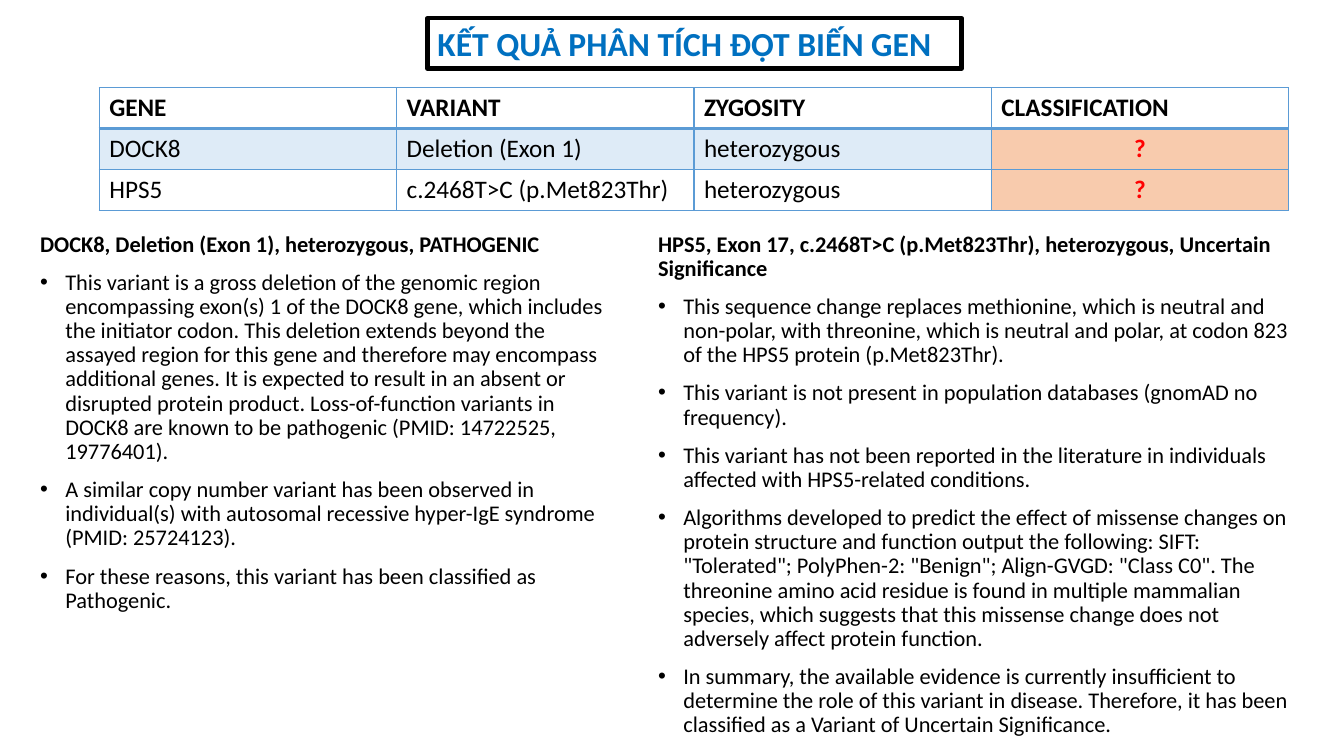
from lxml import etree
from pptx import Presentation
from pptx.dml.color import RGBColor
from pptx.enum.text import MSO_ANCHOR, MSO_AUTO_SIZE, PP_ALIGN
from pptx.oxml.ns import qn
from pptx.util import Pt

LEFT, CENTER = PP_ALIGN.LEFT, PP_ALIGN.CENTER
TOP, MIDDLE = MSO_ANCHOR.TOP, MSO_ANCHOR.MIDDLE
NO_AUTOFIT = MSO_AUTO_SIZE.NONE
TITLE_ONLY = 5

FONT = "Calibri"
BLACK, BLUE, RED = "000000", "0070C0", "FF0000"
BORDER, BAND, PEACH = "5B9BD5", "DEEBF7", "F8CBAD"

TITLE = "KẾT QUẢ PHÂN TÍCH ĐỘT BIẾN GEN"
TITLE_BOX = (305.3, 13, 381.6, 36)

VARIANTS = [
    ("GENE", "VARIANT", "ZYGOSITY", "CLASSIFICATION"),
    ("DOCK8", "Deletion (Exon 1)", "heterozygous", "?"),
    ("HPS5", "c.2468T>C (p.Met823Thr)", "heterozygous", "?"),
]
TABLE_LEFT, TABLE_TOP = 70.9, 62.6
COLUMN_WIDTH, ROW_HEIGHT = 212.4, 29.2
ROW_FILLS = (None, BAND, None)

NOTES_TOP, NOTES_HEIGHT, INDENT = 162.7, 342.7, 18
NOTES = [
    (21.6, 418.3, "DOCK8, Deletion (Exon 1), heterozygous, PATHOGENIC", [
        "This variant is a gross deletion of the genomic region encompassing exon(s) 1 of the DOCK8 gene, "
        "which includes the initiator codon. This deletion extends beyond the assayed region for this gene "
        "and therefore may encompass additional genes. It is expected to result in an absent or disrupted "
        "protein product. Loss-of-function variants in DOCK8 are known to be pathogenic "
        "(PMID: 14722525, 19776401).",
        "A similar copy number variant has been observed in individual(s) with autosomal recessive "
        "hyper-IgE syndrome (PMID: 25724123).",
        "For these reasons, this variant has been classified as Pathogenic.",
    ]),
    (463, 468.7, "HPS5, Exon 17, c.2468T>C (p.Met823Thr), heterozygous, Uncertain Significance", [
        "This sequence change replaces methionine, which is neutral and non-polar, with threonine, "
        "which is neutral and polar, at codon 823 of the HPS5 protein (p.Met823Thr).",
        "This variant is not present in population databases (gnomAD no frequency).",
        "This variant has not been reported in the literature in individuals affected with "
        "HPS5-related conditions.",
        "Algorithms developed to predict the effect of missense changes on protein structure and function "
        'output the following: SIFT: "Tolerated"; PolyPhen-2: "Benign"; Align-GVGD: "Class C0". '
        "The threonine amino acid residue is found in multiple mammalian species, which suggests that this "
        "missense change does not adversely affect protein function.",
        "In summary, the available evidence is currently insufficient to determine the role of this variant "
        "in disease. Therefore, it has been classified as a Variant of Uncertain Significance.",
    ]),
]


def color(value):
    return RGBColor.from_string(value)


def apply(target, values):
    for name, value in values.items():
        setattr(target, name, value)


def write(para, text, size, shade=BLACK, bold=False, **layout):
    span = para.add_run()
    span.text = text
    apply(span.font, {"name": FONT, "size": Pt(size), "bold": bold})
    span.font.color.rgb = color(shade)
    apply(para, {"alignment": LEFT, **layout})


def add_bullet(para):
    properties = para._p.get_or_add_pPr()
    properties.set("marL", str(Pt(INDENT)))
    properties.set("indent", str(-Pt(INDENT)))
    etree.SubElement(properties, qn("a:buFont")).set("typeface", "Arial")
    etree.SubElement(properties, qn("a:buChar")).set("char", "•")


def add_borders(cell, widths):
    properties = cell._tc.get_or_add_tcPr()
    for index, (side, width) in enumerate(widths.items()):
        line = etree.Element(qn(f"a:ln{side}"), w=str(Pt(width)))
        fill = etree.SubElement(line, qn("a:solidFill"))
        etree.SubElement(fill, qn("a:srgbClr")).set("val", BORDER)
        properties.insert(index, line)


def add_title(page):
    box = page.shapes.title
    apply(box, dict(zip(("left", "top", "width", "height"), map(Pt, TITLE_BOX))))
    box.line.color.rgb = color(BLACK)
    box.line.width = Pt(3)
    frame = box.text_frame
    apply(frame, {"word_wrap": True, "auto_size": NO_AUTOFIT, "vertical_anchor": MIDDLE})
    write(frame.paragraphs[0], TITLE, 24, BLUE, True)


def add_variants(page):
    rows, columns = len(VARIANTS), len(VARIANTS[0])
    frame = page.shapes.add_table(rows, columns, Pt(TABLE_LEFT), Pt(TABLE_TOP),
                                  Pt(COLUMN_WIDTH * columns), Pt(ROW_HEIGHT * rows))
    table = frame.table
    apply(table, {"first_row": False, "horz_banding": False})
    for row, values in enumerate(VARIANTS):
        for column, text in enumerate(values):
            cell = table.cell(row, column)
            unknown = text == "?"
            fill = PEACH if unknown else ROW_FILLS[row]
            if fill:
                cell.fill.solid()
                cell.fill.fore_color.rgb = color(fill)
            else:
                cell.fill.background()
            write(cell.text_frame.paragraphs[0], text, 18, RED if unknown else BLACK,
                  unknown or row == 0, alignment=CENTER if unknown else LEFT)
            add_borders(cell, {"L": 1, "R": 1, "T": 2 if row == 1 else 1, "B": 2 if row == 0 else 1})


def add_notes(page, left, width, heading, points):
    box = page.shapes.add_textbox(Pt(left), Pt(NOTES_TOP), Pt(width), Pt(NOTES_HEIGHT))
    frame = box.text_frame
    apply(frame, {"word_wrap": True, "auto_size": NO_AUTOFIT, "vertical_anchor": TOP})
    spacing = {"line_spacing": 0.9, "space_before": Pt(10)}
    write(frame.paragraphs[0], heading, 16, bold=True, **spacing)
    for point in points:
        para = frame.add_paragraph()
        write(para, point, 16, **spacing)
        add_bullet(para)


def main():
    deck = Presentation()
    apply(deck, {"slide_width": Pt(960), "slide_height": Pt(540)})
    page = deck.slides.add_slide(deck.slide_layouts[TITLE_ONLY])
    add_title(page)
    add_variants(page)
    for note in NOTES:
        add_notes(page, *note)
    deck.save("out.pptx")


if __name__ == "__main__":
    main()
